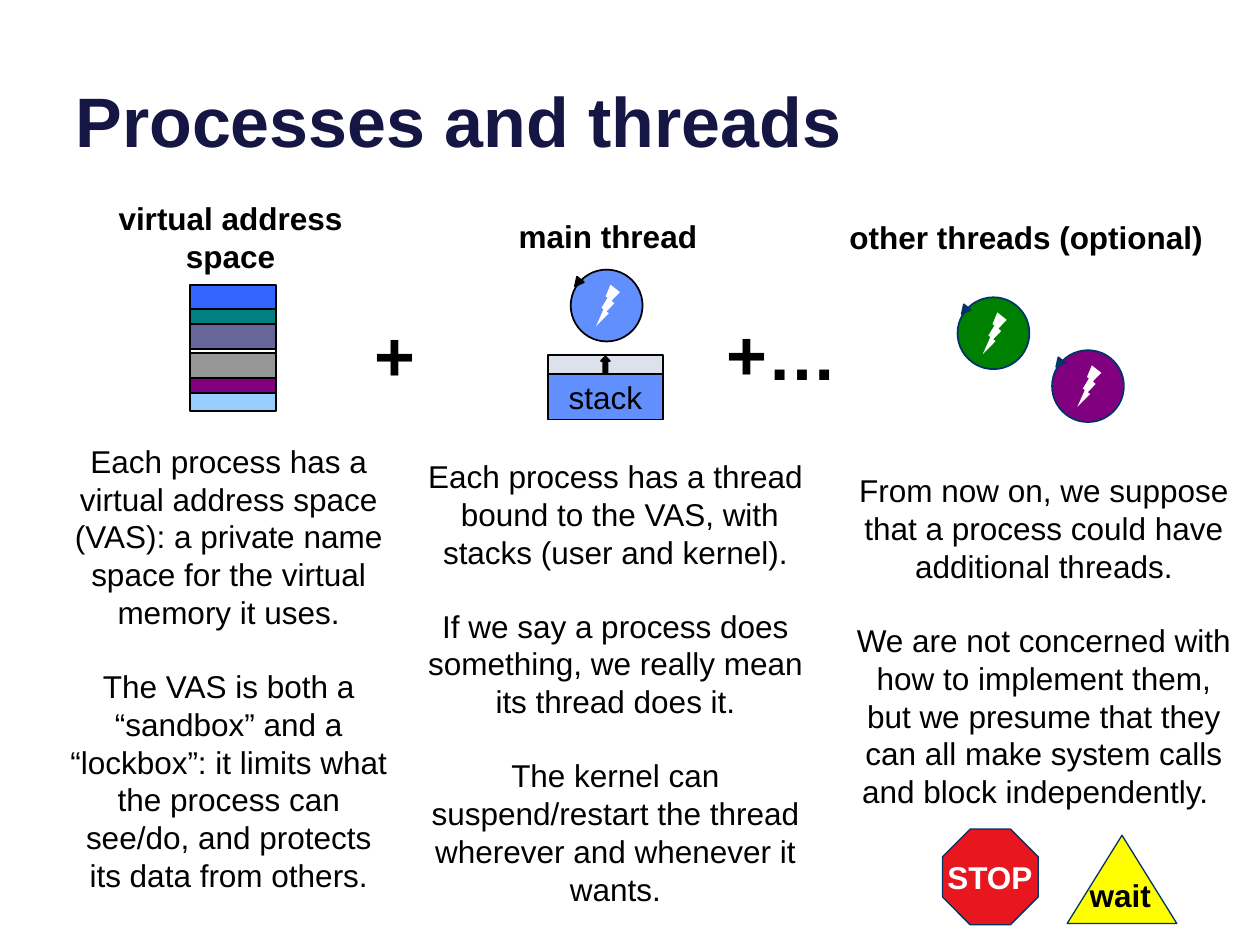
from dataclasses import dataclass
from itertools import accumulate

from pptx import Presentation
from pptx.dml.color import RGBColor
from pptx.enum.shapes import MSO_SHAPE
from pptx.enum.text import MSO_ANCHOR, PP_ALIGN
from pptx.util import Inches, Pt

PROCESS = MSO_SHAPE.FLOWCHART_PROCESS
ELLIPSE, BOLT = MSO_SHAPE.OVAL, MSO_SHAPE.LIGHTNING_BOLT
TRIANGLE, UP_ARROW = MSO_SHAPE.ISOSCELES_TRIANGLE, MSO_SHAPE.UP_ARROW
OCTAGON, MERGE = MSO_SHAPE.OCTAGON, MSO_SHAPE.FLOWCHART_MERGE
MIDDLE, TOP, BOTTOM = MSO_ANCHOR.MIDDLE, MSO_ANCHOR.TOP, MSO_ANCHOR.BOTTOM
CENTER, LEFT = PP_ALIGN.CENTER, PP_ALIGN.LEFT

BLACK = RGBColor(0x00, 0x00, 0x00)
WHITE = RGBColor(0xFF, 0xFF, 0xFF)
TITLE_NAVY = RGBColor(0x16, 0x16, 0x45)
NAVY = RGBColor(0x00, 0x33, 0x67)
BLUE = RGBColor(0x33, 0x66, 0xFF)
TEAL = RGBColor(0x00, 0x80, 0x80)
SLATE = RGBColor(0x66, 0x66, 0x99)
GRAY = RGBColor(0x96, 0x96, 0x96)
PURPLE = RGBColor(0x80, 0x00, 0x80)
SKY = RGBColor(0x99, 0xCC, 0xFF)
THREAD_BLUE = RGBColor(0x61, 0x8F, 0xFD)
PALE = RGBColor(0xDD, 0xE1, 0xEB)
GREEN = RGBColor(0x00, 0x80, 0x00)
RED = RGBColor(0xE8, 0x16, 0x1F)
YELLOW = RGBColor(0xFF, 0xFF, 0x00)

FONT = "Arial"
BODY_LINE = 20.7  # height of one 18 pt line, in points


@dataclass(frozen=True)
class Box:
    left: float
    top: float
    width: float
    height: float

    def lengths(self) -> list:
        return [Inches(v) for v in (self.left, self.top, self.width, self.height)]


@dataclass(frozen=True)
class Label:
    box: Box
    paragraphs: tuple[str, ...]
    size: int = 18
    bold: bool = True
    color: RGBColor = BLACK
    align: PP_ALIGN = CENTER
    anchor: MSO_ANCHOR = MIDDLE
    wrap: bool = False


@dataclass(frozen=True)
class Thread:
    left: float
    top: float
    fill: RGBColor
    line: RGBColor


@dataclass(frozen=True)
class Band:
    height: float
    fill: RGBColor


LABELS = (
    Label(Box(2.87, 2.42, 0.52, 0.77), ("+",), size=40),
    Label(Box(5.66, 2.41, 1.09, 0.77), ("+…",), size=40),
    Label(Box(0.78, 1.68, 2.1, 0.4), ("virtual address space",), wrap=True),
    Label(Box(4.01, 1.67, 1.63, 0.4), ("main thread",)),
    Label(Box(6.63, 1.68, 3.03, 0.4), ("other threads (optional)",)),
    Label(Box(0.44, 3.43, 2.75, 3.74), (
        "Each process has a virtual address space (VAS): a private name space "
        "for the virtual memory it uses.",
        "The VAS is both a “sandbox” and a “lockbox”: it limits what the process "
        "can see/do, and protects its data from others.",
    ), bold=False, wrap=True),
    Label(Box(3.27, 3.7, 3.23, 3.43), (
        "Each process has a thread  bound to the VAS, with stacks (user and kernel).",
        "If we say a process does something, we really mean its thread does it.",
        "The kernel can suspend/restart the thread wherever and whenever it wants.",
    ), bold=False, wrap=True),
    Label(Box(6.67, 3.67, 3.23, 2.83), (
        "From now on, we suppose that a process could have additional threads.",
        "We are not concerned with how to implement them, but we presume that "
        "they can all make system calls and block independently.  ",
    ), bold=False, wrap=True),
)
SIGN_LABELS = (
    Label(Box(7.42, 6.76, 0.89, 0.4), ("STOP",), color=WHITE, align=LEFT, anchor=TOP),
    Label(Box(8.55, 6.9, 0.69, 0.4), ("wait",), align=LEFT, anchor=TOP),
)
THREADS = (
    Thread(4.53, 2.14, THREAD_BLUE, BLACK),
    Thread(7.6, 2.36, GREEN, NAVY),
    Thread(8.35, 2.78, PURPLE, NAVY),
)
ADDRESS_SPACE = (
    Band(0.19, BLUE), Band(0.12, TEAL), Band(0.2, SLATE), Band(0.03, WHITE),
    Band(0.2, GRAY), Band(0.12, PURPLE), Band(0.14, SKY),
)


def apply_format(target, **values) -> None:
    for attribute, value in values.items():
        setattr(target, attribute, value)


def write_text(frame, label: Label) -> None:
    """Fill a text frame, one blank line's height between paragraphs."""
    apply_format(frame, word_wrap=label.wrap, vertical_anchor=label.anchor)
    for index, words in enumerate(label.paragraphs):
        paragraph = frame.add_paragraph() if index else frame.paragraphs[0]
        apply_format(paragraph, alignment=label.align,
                     space_before=Pt(BODY_LINE if index else 0))
        run = paragraph.add_run()
        run.text = words
        apply_format(run.font, name=FONT, size=Pt(label.size), bold=label.bold)
        run.font.color.rgb = label.color


def add_label(slide, label: Label) -> None:
    write_text(slide.shapes.add_textbox(*label.box.lengths()).text_frame, label)


def add_figure(slide, kind: MSO_SHAPE, box: Box, fill: RGBColor,
               line: RGBColor | None = BLACK, line_width: float = 1,
               rotation: float = 0, flip: str = ""):
    """Draw a flat preset shape; flip is "flipH" or "flipV"."""
    figure = slide.shapes.add_shape(kind, *box.lengths())
    figure.shadow.inherit = False
    figure.rotation = rotation
    figure.fill.solid()
    figure.fill.fore_color.rgb = fill
    if line is None:
        figure.line.fill.background()
    else:
        figure.line.color.rgb = line
        figure.line.width = Pt(line_width)
    if flip:
        figure._element.spPr.xfrm.set(flip, "1")
    return figure


def add_thread(slide, thread: Thread) -> None:
    x, y = thread.left, thread.top
    add_figure(slide, ELLIPSE, Box(x, y, 0.57, 0.57), thread.fill, thread.line)
    add_figure(slide, BOLT, Box(x + 0.2, y + 0.12, 0.19, 0.33), WHITE, None,
               flip="flipH")
    add_figure(slide, TRIANGLE, Box(x + 0.02, y + 0.07, 0.07, 0.07),
               thread.line, thread.line, rotation=219)


def add_address_space(slide, left: float, top: float, width: float) -> None:
    tops = accumulate((band.height for band in ADDRESS_SPACE), initial=top)
    for band, band_top in zip(ADDRESS_SPACE, tops):
        add_figure(slide, PROCESS, Box(left, band_top, width, band.height), band.fill)


def add_stack(slide) -> None:
    add_figure(slide, PROCESS, Box(4.35, 2.82, 0.91, 0.15), PALE)
    stack_box = Box(4.35, 2.97, 0.91, 0.36)
    stack = add_figure(slide, PROCESS, stack_box, THREAD_BLUE)
    write_text(stack.text_frame, Label(stack_box, ("stack",), bold=False))
    add_figure(slide, UP_ARROW, Box(4.77, 2.83, 0.07, 0.13), BLACK)


def add_signs(slide) -> None:
    octagon = add_figure(slide, OCTAGON, Box(7.48, 6.58, 0.76, 0.76), RED, NAVY, 0.75)
    octagon.adjustments[0] = 0.29
    add_figure(slide, MERGE, Box(8.47, 6.63, 0.87, 0.7), YELLOW, NAVY, 0.75,
               flip="flipV")
    for label in SIGN_LABELS:
        add_label(slide, label)


def main() -> None:
    presentation = Presentation()
    apply_format(presentation, slide_width=Inches(10), slide_height=Inches(7.5))
    slide = presentation.slides.add_slide(presentation.slide_layouts[5])

    title_box = Box(0.5, -0.37, 9, 1.7)
    title = slide.shapes.title
    apply_format(title, **dict(zip(("left", "top", "width", "height"),
                                   title_box.lengths())))
    write_text(title.text_frame, Label(title_box, ("Processes and threads",), 40,
                                       color=TITLE_NAVY, align=LEFT,
                                       anchor=BOTTOM, wrap=True))
    add_address_space(slide, 1.51, 2.26, 0.68)
    add_stack(slide)
    for thread in THREADS:
        add_thread(slide, thread)
    for label in LABELS:
        add_label(slide, label)
    add_signs(slide)
    presentation.save("out.pptx")


if __name__ == "__main__":
    main()
